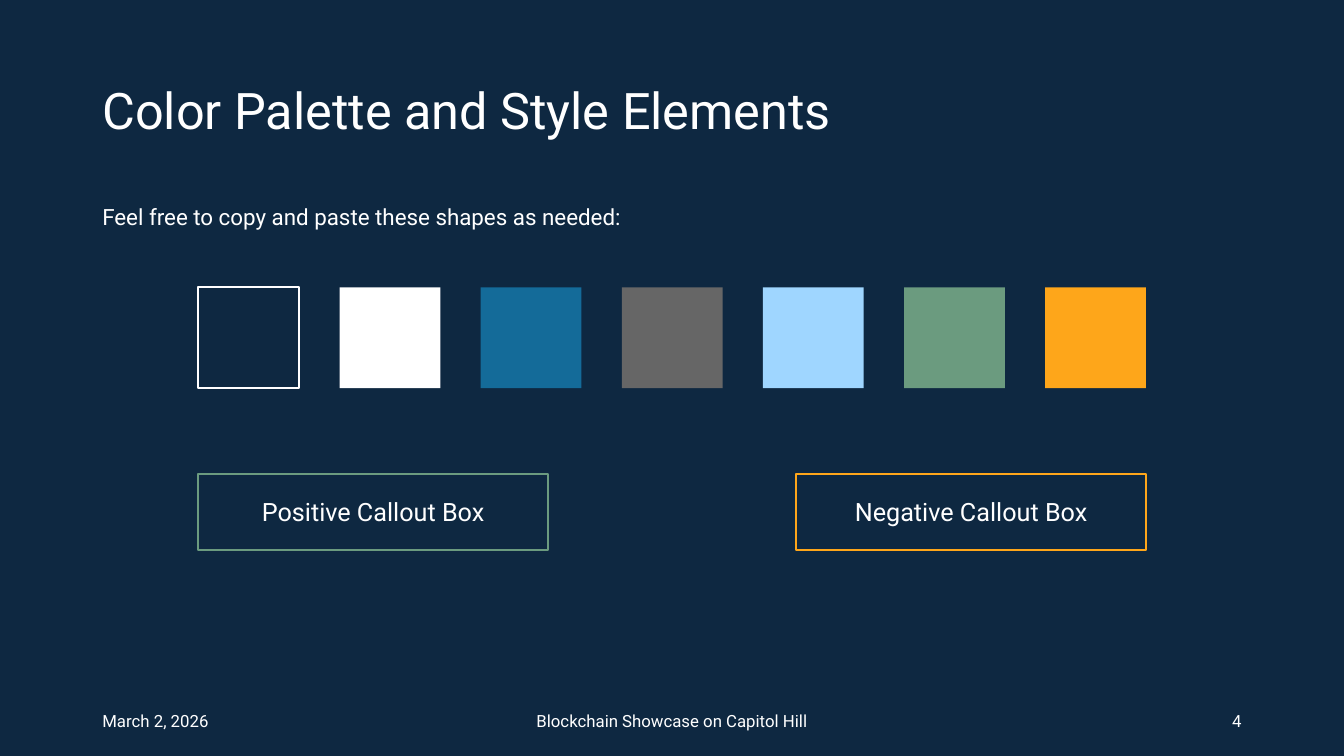
from pptx import Presentation
from pptx.dml.color import RGBColor
from pptx.enum.shapes import MSO_SHAPE
from pptx.enum.text import MSO_ANCHOR, PP_ALIGN
from pptx.util import Cm, Pt

RECT = MSO_SHAPE.RECTANGLE
TOP, MIDDLE = MSO_ANCHOR.TOP, MSO_ANCHOR.MIDDLE
LEFT, CENTER, RIGHT = PP_ALIGN.LEFT, PP_ALIGN.CENTER, PP_ALIGN.RIGHT

FONT = "Roboto"
NAVY, WHITE, GREEN, ORANGE = "0E2841", "FFFFFF", "6B9B7F", "FEA61A"
SWATCHES = [NAVY, WHITE, "146B99", "666666", "9FD6FF", GREEN, ORANGE]
CALLOUTS = [("Positive Callout Box", GREEN), ("Negative Callout Box", ORANGE)]


def paint(target, color):
    target.solid()
    target.fore_color.rgb = RGBColor.from_string(color)


def write(shape, text, size, align=LEFT, anchor=MIDDLE, spacing=1.0):
    frame = shape.text_frame
    frame.word_wrap = True
    frame.vertical_anchor = anchor
    para = frame.paragraphs[0]
    para.alignment = align
    para.line_spacing = spacing
    run = para.add_run()
    run.text = text
    run.font.size = Pt(size)
    run.font.name = FONT
    run.font.color.rgb = RGBColor.from_string(WHITE)


def add_text(slide, box, text, size, **style):
    shape = slide.shapes.add_textbox(*map(Cm, box))
    write(shape, text, size, **style)


def add_rect(slide, box, fill=None, line=None):
    shape = slide.shapes.add_shape(RECT, *map(Cm, box))
    shape.shadow.inherit = False
    if fill:
        paint(shape.fill, fill)
    else:
        shape.fill.background()
    if line:
        paint(shape.line.fill, line)
        shape.line.width = Pt(1.5)
    else:
        shape.line.fill.background()
    return shape


def add_header(slide, box):
    left, top, width, height = box
    add_text(slide, (left, top, 19, 3.68), "Color Palette and Style Elements",
             36, spacing=0.9)
    add_text(slide, (left, top + 4.06, width, height - 4.06),
             "Feel free to copy and paste these shapes as needed:",
             16, anchor=TOP, spacing=0.9)


def add_palette(slide, box):
    left, top, width, side = box
    step = (width - side) / (len(SWATCHES) - 1)
    for i, color in enumerate(SWATCHES):
        line = WHITE if color == NAVY else None
        add_rect(slide, (left + i * step, top, side, side), color, line)


def add_callouts(slide, box):
    left, top, width, height = box
    wide = 8.81
    for i, (text, color) in enumerate(CALLOUTS):
        shape = add_rect(slide, (left + i * (width - wide), top, wide, height),
                         line=color)
        write(shape, text, 18, align=CENTER)


def add_footer(slide, box):
    left, top, width, height = box
    parts = [("March 2, 2026", 7.62, LEFT, 0),
             ("Blockchain Showcase on Capitol Hill", 11.43, CENTER, 0.5),
             ("4", 7.62, RIGHT, 1)]
    for text, wide, align, share in parts:
        add_text(slide, (left + share * (width - wide), top, wide, height),
                 text, 12, align=align)


def main():
    deck = Presentation()
    deck.slide_width, deck.slide_height = Cm(33.87), Cm(19.05)
    slide = deck.slides.add_slide(deck.slide_layouts[6])
    paint(slide.background.fill, NAVY)
    add_header(slide, (2.33, 1.02, 29.21, 16.15))
    add_palette(slide, (5, 7.24, 23.88, 2.54))
    add_callouts(slide, (5, 11.94, 23.88, 1.91))
    add_footer(slide, (2.33, 17.65, 29.21, 1.02))
    deck.save("out.pptx")


if __name__ == "__main__":
    main()
